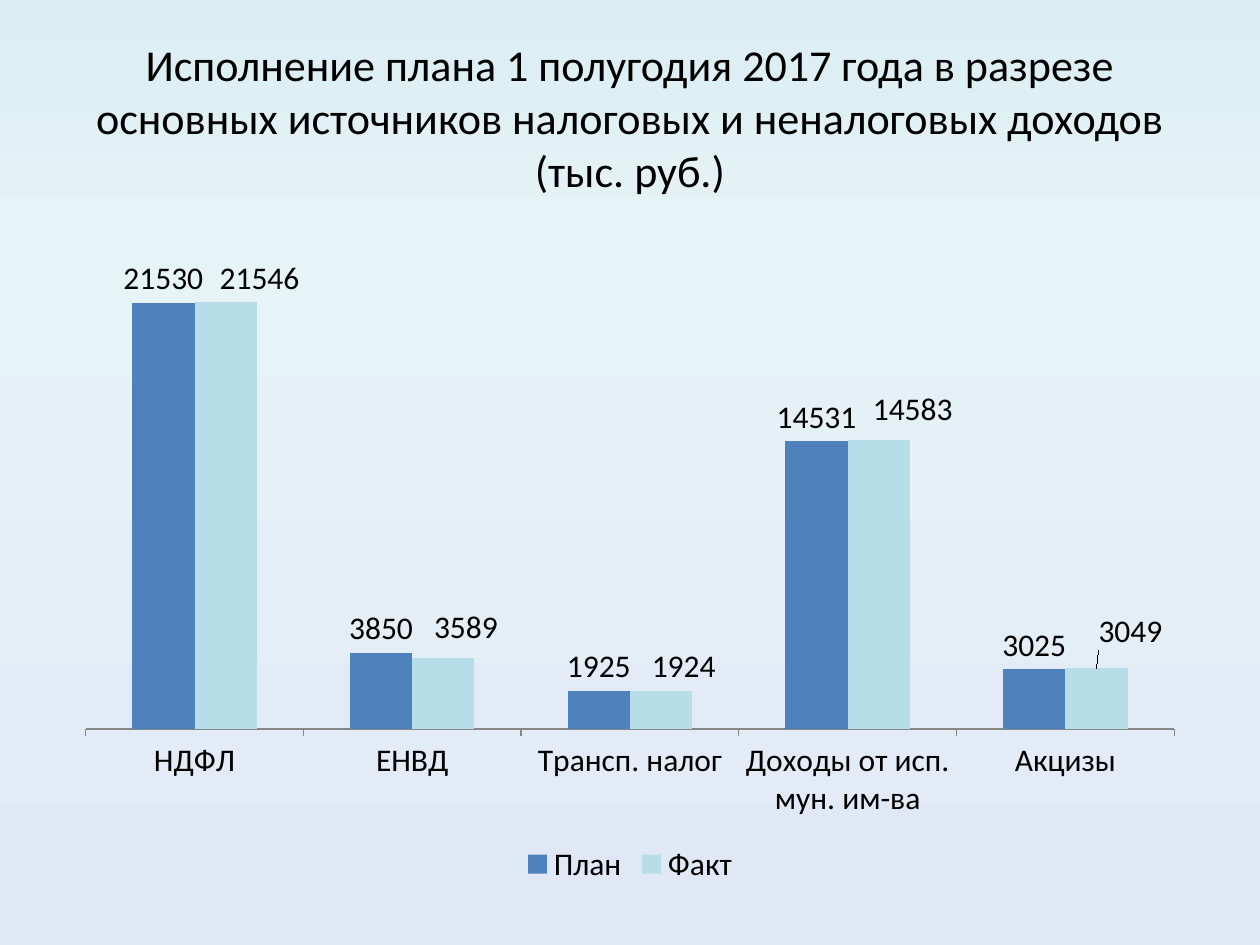
from lxml import etree
from pptx import Presentation
from pptx.chart.data import CategoryChartData
from pptx.dml.color import RGBColor
from pptx.enum import chart as ch, text
from pptx.oxml import parse_xml
from pptx.oxml.ns import nsdecls, qn
from pptx.util import Inches, Pt

FONT = "Calibri"
BLACK = RGBColor(0x00, 0x00, 0x00)
AXIS_GREY = RGBColor(0x86, 0x86, 0x86)
PLAN_BLUE = RGBColor(0x4F, 0x81, 0xBD)
FACT_BLUE = RGBColor(0xB7, 0xDE, 0xE8)
BACKGROUND = [(0, RGBColor(0xDB, 0xEE, 0xF4)),
              (25, RGBColor(0xE6, 0xF3, 0xF7)),
              (100, RGBColor(0xE1, 0xE8, 0xF5))]

CATEGORIES = ["НДФЛ", "ЕНВД", "Трансп. налог", "Доходы от исп. мун. им-ва", "Акцизы"]
SERIES = [("План", [21530, 3850, 1925, 14531, 3025], PLAN_BLUE),
          ("Факт", [21546, 3589, 1924, 14583, 3049], FACT_BLUE)]
# Shift of each "Факт" label, as fractions of the chart size
FACT_SHIFTS = [(0.03, 0), (0.02, -0.01), (0.02, 0), (0.03, -0.01), (0.03, -0.02)]


def set_font(font, size, color=BLACK):
    font.name, font.size = FONT, Pt(size)
    font.color.rgb = color


def set_background(s, stops):
    fill = s.background.fill
    fill.gradient()
    grad = s.background._cSld.find(".//" + qn("a:gradFill"))
    stop_list = grad.find(qn("a:gsLst"))
    for old in list(stop_list):
        stop_list.remove(old)
    for percent, color in stops:
        gs = etree.SubElement(stop_list, qn("a:gs"), pos=str(percent * 1000))
        etree.SubElement(gs, qn("a:srgbClr"), val=str(color))
    lin = grad.find(qn("a:lin"))
    lin.set("ang", "5400000")
    lin.set("scaled", "0")


def set_title(sp, words, size):
    sp.left, sp.top, sp.width, sp.height = map(Inches, (0.5, 0.3, 9, 1.25))
    tf = sp.text_frame
    tf.word_wrap = True
    tf.auto_size = text.MSO_AUTO_SIZE.NONE
    tf.vertical_anchor = text.MSO_ANCHOR.MIDDLE
    p = tf.paragraphs[0]
    p.alignment = text.PP_ALIGN.CENTER
    r = p.add_run()
    r.text = words
    set_font(r.font, size)


def manual_layout(**values):
    items = "".join(f'<c:{name} val="{value}"/>' for name, value in values.items())
    return parse_xml(f'<c:layout {nsdecls("c")}><c:manualLayout>{items}'
                     '</c:manualLayout></c:layout>')


def place_plot(chart):
    area = chart._chartSpace.chart.plotArea
    for old in area.findall(qn("c:layout")):
        area.remove(old)
    area.insert(0, manual_layout(layoutTarget="inner", xMode="edge", yMode="edge",
                                 x=0.02, y=0.02, w=0.96, h=0.74))


def shift_labels(series, shifts):
    for point, (dx, dy) in enumerate(shifts):
        label = series.points[point].data_label
        label.position = ch.XL_LABEL_POSITION.OUTSIDE_END
        set_font(label.font, 18)
        element = series._element.xpath(f'.//c:dLbl[c:idx/@val="{point}"]')[0]
        element.insert(1, manual_layout(x=dx, y=dy))


def add_column_chart(s):
    data = CategoryChartData()
    data.categories = CATEGORIES
    for name, values, _ in SERIES:
        data.add_series(name, values)
    chart = s.shapes.add_chart(ch.XL_CHART_TYPE.COLUMN_CLUSTERED, Inches(0.5), Inches(1.75),
                               Inches(9), Inches(5.31), data).chart
    set_font(chart.font, 18)
    chart.has_title = False
    chart.has_legend = True
    chart.legend.position = ch.XL_LEGEND_POSITION.BOTTOM
    chart.legend.include_in_layout = False

    # Axes
    chart.value_axis.visible = False
    chart.value_axis.has_major_gridlines = False
    chart.value_axis.minimum_scale = 0
    chart.value_axis.maximum_scale = 25000
    chart.category_axis.major_tick_mark = ch.XL_TICK_MARK.OUTSIDE
    chart.category_axis.format.line.color.rgb = AXIS_GREY
    chart.category_axis.format.line.width = Pt(0.75)

    # Columns and their labels
    plot = chart.plots[0]
    plot.gap_width, plot.overlap = 150, 0
    plot.vary_by_categories = False
    for series, (_, _, color) in zip(plot.series, SERIES):
        series.format.fill.solid()
        series.format.fill.fore_color.rgb = color
        labels = series.data_labels
        labels.show_value = True
        labels.position = ch.XL_LABEL_POSITION.OUTSIDE_END
        set_font(labels.font, 18)
    shift_labels(plot.series[1], FACT_SHIFTS)
    place_plot(chart)


def main():
    prs = Presentation()
    prs.slide_width, prs.slide_height = Inches(10), Inches(7.5)
    s = prs.slides.add_slide(prs.slide_layouts[5])
    set_background(s, BACKGROUND)
    set_title(s.shapes.title, "Исполнение плана 1 полугодия 2017 года в разрезе основных "
              "источников налоговых и неналоговых доходов (тыс. руб.)", size=25.2)
    add_column_chart(s)
    prs.save("out.pptx")


if __name__ == "__main__":
    main()
